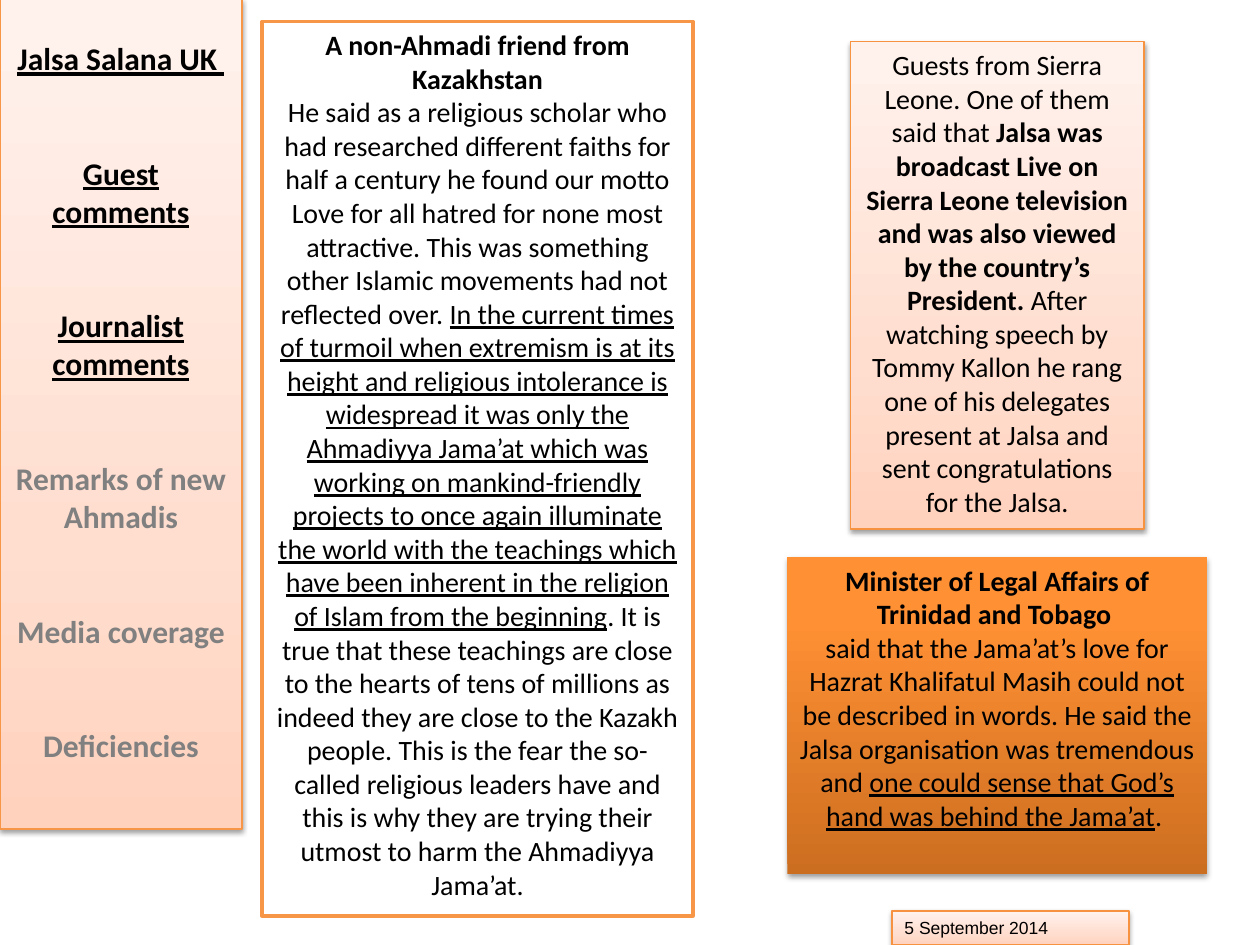
"""Slide of guest comments on Jalsa Salana UK with a sidebar of topics."""
from copy import deepcopy

from lxml.etree import SubElement
from pptx import Presentation
from pptx.dml.color import RGBColor
from pptx.enum.shapes import MSO_SHAPE
from pptx.enum.text import MSO_ANCHOR, PP_ALIGN
from pptx.oxml.ns import qn
from pptx.util import Inches, Pt

BLACK = RGBColor(0x00, 0x00, 0x00)
GREY = RGBColor(0x80, 0x80, 0x80)
WHITE = RGBColor(0xFF, 0xFF, 0xFF)
ORANGE = RGBColor(0xF7, 0x96, 0x46)
DEEP_ORANGE = RGBColor(0xF6, 0x92, 0x40)
PEACH = [
    (0, RGBColor(0xFF, 0xD2, 0xBD)),
    (0.35, RGBColor(0xFF, 0xDE, 0xD0)),
    (1, RGBColor(0xFF, 0xF2, 0xED)),
]
AMBER = [
    (0, RGBColor(0xCC, 0x6E, 0x20)),
    (0.8, RGBColor(0xFF, 0x90, 0x34)),
    (1, RGBColor(0xFF, 0x91, 0x36)),
]
PLAIN, BOLD, UNDERLINED = "plain", "bold", "underlined"

TOPICS = [
    ("Jalsa Salana UK ", True),
    ("Guest comments", True),
    ("Journalist comments", True),
    ("Remarks of new Ahmadis", False),
    ("Media coverage", False),
    ("Deficiencies", False),
]
KAZAKHSTAN = [
    [("A non-Ahmadi friend from Kazakhstan", BOLD)],
    [
        ("He said as a religious scholar who had researched different faiths for half a century "
         "he found our motto Love for all hatred for none most attractive. This was something "
         "other Islamic movements had not reflected over. ", PLAIN),
        ("In the current times of turmoil when extremism is at its height and religious "
         "intolerance is widespread it was only the Ahmadiyya Jama’at which was working on "
         "mankind-friendly projects to once again illuminate the world with the teachings which "
         "have been inherent in the religion of Islam from the beginning", UNDERLINED),
        (". It is true that these teachings are close to the hearts of tens of millions as indeed "
         "they are close to the Kazakh people. This is the fear the so-called religious leaders "
         "have and this is why they are trying their utmost to harm the Ahmadiyya Jama’at.", PLAIN),
    ],
]
TRINIDAD = [
    [("Minister of Legal Affairs of Trinidad and Tobago ", BOLD)],
    [
        ("said that the Jama’at’s love for Hazrat Khalifatul Masih could not be described in "
         "words. He said the Jalsa organisation was tremendous and ", PLAIN),
        ("one could sense that God’s hand was behind the Jama’at", UNDERLINED),
        (". ", PLAIN),
    ],
]
SIERRA_LEONE = [
    [
        ("Guests from Sierra Leone. One of them said that ", PLAIN),
        ("Jalsa was broadcast Live on Sierra Leone television and was also viewed by the "
         "country’s President.", BOLD),
        (" After watching speech by Tommy Kallon he rang one of his delegates present at Jalsa "
         "and sent congratulations for the Jalsa.", PLAIN),
    ],
]
DATE = "5 September 2014"


def add_panel(slide, place, fill, outline=None, width=0.75):
    """Add a rectangle; a list of stops as fill gives a shaded panel with a shadow."""
    panel = slide.shapes.add_shape(MSO_SHAPE.RECTANGLE, *map(Inches, place))
    panel.shadow.inherit = False
    if isinstance(fill, list):
        shade(panel, fill)
    else:
        panel.fill.solid()
        panel.fill.fore_color.rgb = fill
    if outline is None:
        panel.line.fill.background()
    else:
        panel.line.color.rgb = outline
        panel.line.width = Pt(width)
    panel.text_frame.word_wrap = True
    panel.text_frame.vertical_anchor = MSO_ANCHOR.TOP
    return panel


def shade(panel, stops):
    """Give a panel a bottom-to-top gradient and a soft shadow below."""
    panel.fill.gradient()
    properties = panel._element.spPr
    stop_list = properties.find(".//" + qn("a:gsLst"))
    stop_list.append(deepcopy(stop_list[0]))
    for stop, (position, color) in zip(panel.fill.gradient_stops, stops):
        stop.position = position
        stop.color.rgb = color
    panel.fill.gradient_angle = 90
    shadow = SubElement(properties.find(qn("a:effectLst")), qn("a:outerShdw"),
                        blurRad=str(Pt(3.1)), dist=str(Pt(1.6)), dir="5400000", rotWithShape="0")
    color = SubElement(shadow, qn("a:srgbClr"), val="000000")
    SubElement(color, qn("a:alpha"), val="38000")


def add_paragraph(panel, index, size, align=PP_ALIGN.CENTER, face="Calibri", color=BLACK):
    """Return the styled paragraph at an index, the first one being there already."""
    frame = panel.text_frame
    paragraph = frame.add_paragraph() if index else frame.paragraphs[0]
    paragraph.alignment = align
    paragraph.font.name = face
    paragraph.font.size = Pt(size)
    paragraph.font.color.rgb = color
    return paragraph


def write_comment(panel, comment):
    """Fill a panel with paragraphs of styled runs."""
    for index, parts in enumerate(comment):
        paragraph = add_paragraph(panel, index, 16)
        for text, style in parts:
            run = paragraph.add_run()
            run.text = text
            run.font.bold = style == BOLD
            run.font.underline = style == UNDERLINED


def write_topics(panel):
    """List the topics, with those reached so far underlined."""
    panel.text_frame.margin_top = Inches(0.32)
    for index, (topic, reached) in enumerate(TOPICS):
        paragraph = add_paragraph(panel, index, 18, color=BLACK if reached else GREY)
        paragraph.text = topic
        paragraph.font.bold = True
        paragraph.font.underline = reached
        if index:
            paragraph.space_before = Pt(44)


def main():
    """Build and save the slide."""
    deck = Presentation()
    deck.slide_width, deck.slide_height = Inches(10), Inches(7.5)
    slide = deck.slides.add_slide(deck.slide_layouts[6])

    write_topics(add_panel(slide, (0, -0.01, 1.92, 6.59), PEACH, ORANGE))
    write_comment(add_panel(slide, (2.08, 0.17, 3.42, 7.1), WHITE, ORANGE, 2), KAZAKHSTAN)
    write_comment(add_panel(slide, (6.25, 4.42, 3.33, 2.52), AMBER), TRINIDAD)
    date_panel = add_panel(slide, (7.08, 7.23, 1.88, 0.27), PEACH, DEEP_ORANGE)
    add_paragraph(date_panel, 0, 10, PP_ALIGN.LEFT, "Arial").text = DATE
    write_comment(add_panel(slide, (6.75, 0.33, 2.33, 3.87), PEACH, DEEP_ORANGE), SIERRA_LEONE)

    deck.save("out.pptx")


if __name__ == "__main__":
    main()
